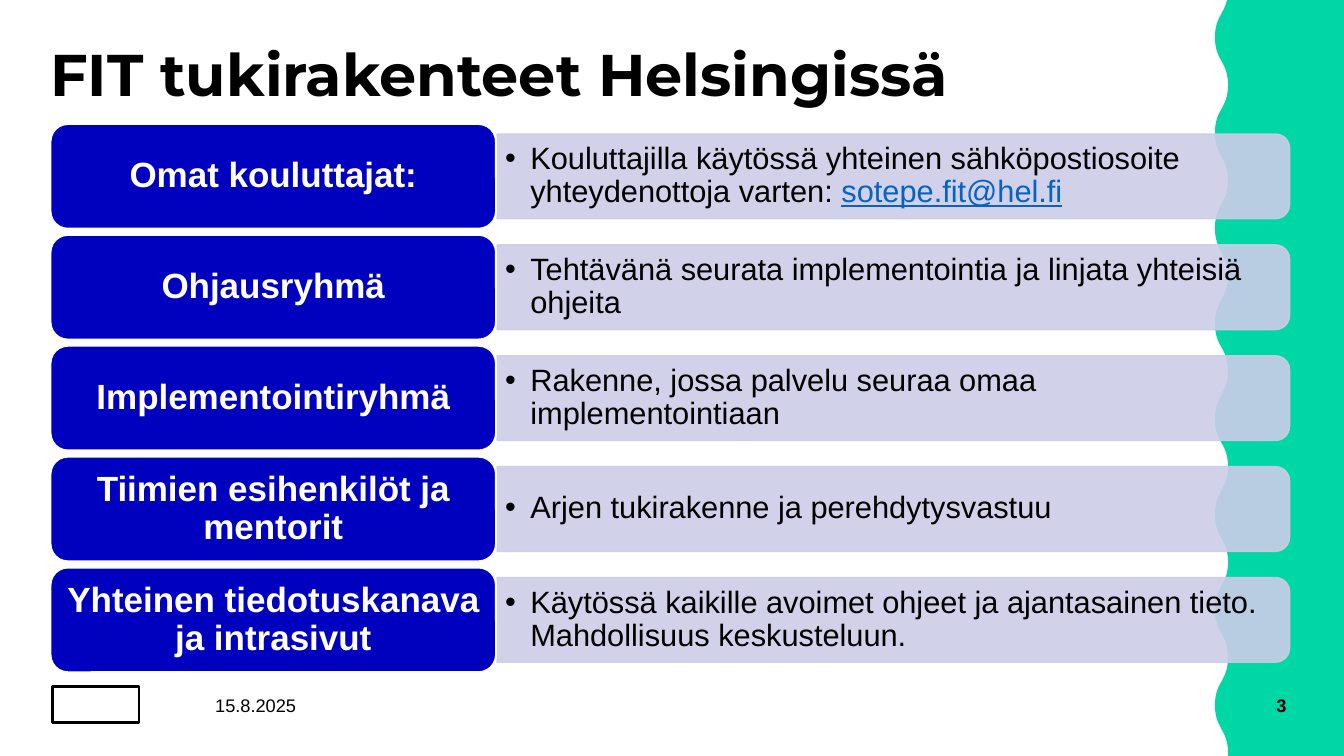
"""Build the slide on FIT support structures in Helsinki."""
import dataclasses

import lxml.etree
import pptx
import pptx.dml.color
import pptx.enum.shapes
import pptx.enum.text
import pptx.oxml.ns
import pptx.util

PX = 9144
SHAPE = pptx.enum.shapes.MSO_SHAPE
ALIGN = pptx.enum.text.PP_ALIGN
ANCHOR = pptx.enum.text.MSO_ANCHOR


@dataclasses.dataclass(frozen=True)
class Theme:
    """Hold the colours, fonts and type sizes of the slide."""
    black: str = "000000"
    white: str = "FFFFFF"
    green: str = "00D7A7"
    blue: str = "0000BF"
    lilac: str = "CCCCE8"
    link: str = "0563C1"
    title_font: str = "Montserrat"
    body_font: str = "Arial"
    title_size: int = 42
    label_size: int = 25
    detail_size: int = 22
    footer_size: int = 13


THEME = Theme()
ROWS = [
    ("Omat kouluttajat:",
     "Kouluttajilla käytössä yhteinen sähköpostiosoite yhteydenottoja varten: ",
     "sotepe.fit@hel.fi"),
    ("Ohjausryhmä",
     "Tehtävänä seurata implementointia ja linjata yhteisiä ohjeita", ""),
    ("Implementointiryhmä",
     "Rakenne, jossa palvelu seuraa omaa implementointiaan", ""),
    ("Tiimien esihenkilöt ja mentorit",
     "Arjen tukirakenne ja perehdytysvastuu", ""),
    ("Yhteinen tiedotuskanava ja intrasivut",
     "Käytössä kaikille avoimet ohjeet ja ajantasainen tieto. "
     "Mahdollisuus keskusteluun.", ""),
]


def px(length):
    """Turn px into EMU."""
    return round(length * PX)


def rgb(value):
    """Turn a hex string into a colour."""
    return pptx.dml.color.RGBColor.from_string(value)


def add_span(para, text, *, size, color, font=THEME.body_font, bold=False, underline=False):
    """Add formatted text to a paragraph."""
    span = para.add_run()
    span.text = text
    span.font.name = font
    span.font.size = pptx.util.Pt(size)
    span.font.bold = bold
    span.font.underline = underline
    span.font.color.rgb = rgb(color)


class Slide:
    """Draw elements on the current page in one theme."""

    def __init__(self, page, theme):
        """Keep the page and the theme."""
        self.page = page
        self.theme = theme

    def frame(self, box, inset=(0, 0), align=ALIGN.LEFT, anchor=ANCHOR.MIDDLE, spacing=0.9):
        """Set up the text frame of a box and return its first paragraph."""
        frame = box.text_frame
        frame.word_wrap = True
        frame.auto_size = pptx.enum.text.MSO_AUTO_SIZE.NONE
        frame.vertical_anchor = anchor
        frame.margin_left = frame.margin_right = px(inset[0])
        frame.margin_top = frame.margin_bottom = px(inset[1])
        para = frame.paragraphs[0]
        para.alignment = align
        para.line_spacing = spacing
        return para

    def paint(self, shape, fill, line=None, width=1):
        """Give a shape its fill and outline without a shadow."""
        shape.shadow.inherit = False
        shape.fill.solid()
        shape.fill.fore_color.rgb = rgb(fill)
        if line:
            shape.line.color.rgb = rgb(line)
            shape.line.width = pptx.util.Pt(width)
        else:
            shape.line.fill.background()

    def shape(self, kind, left, top, width, height, fill, line=None, weight=1):
        """Add a painted preset shape."""
        shape = self.page.shapes.add_shape(kind, px(left), px(top), px(width), px(height))
        self.paint(shape, fill, line, weight)
        return shape

    def textbox(self, left, top, width, height, **layout):
        """Add a text box and return its first paragraph."""
        box = self.page.shapes.add_textbox(px(left), px(top), px(width), px(height))
        return self.frame(box, **layout)

    def title(self, text):
        """Place and fill the title."""
        box = self.page.shapes.title
        box.left, box.top, box.width, box.height = px(50), px(45), px(1229), px(86)
        para = self.frame(box, anchor=ANCHOR.TOP)
        add_span(para, text, size=self.theme.title_size, color=self.theme.black,
                 font=self.theme.title_font, bold=True)

    def wave(self, crest=1205, trough=1218, first=37, step=47.33, right=1333, bottom=750):
        """Draw the green band with its wavy left edge."""
        points = []
        for turn in range(-1, 16):
            start, end = (crest, trough) if turn % 2 == 0 else (trough, crest)
            for part in range(12):
                t = part / 12
                x = start + (end - start) * t * t * (3 - 2 * t)
                y = first + step * (turn + 1.5 * t * (1 - t) + t ** 3)
                if 0 < y < bottom:
                    points.append((px(x), px(y)))
        points += [(px(trough), px(bottom)), (px(right), px(bottom)), (px(right), 0)]
        builder = self.page.shapes.build_freeform(px(trough - 1), 0)
        builder.add_line_segments(points, close=True)
        self.paint(builder.convert_to_shape(), self.theme.green)

    def bar(self, middle):
        """Add a translucent bar, rounded on its right side."""
        length, thickness, center = 786, 84, 886
        bar = self.shape(SHAPE.ROUND_2_SAME_RECTANGLE, center - thickness / 2,
                         middle - length / 2, thickness, length,
                         self.theme.lilac, self.theme.lilac)
        bar.rotation = 90
        for color in bar.element.spPr.iter(pptx.oxml.ns.qn("a:srgbClr")):
            lxml.etree.SubElement(color, pptx.oxml.ns.qn("a:alpha"), val="90000")

    def detail(self, middle, text, address):
        """Add the bulleted text on a bar."""
        para = self.textbox(492, middle - 38, 782, 76, inset=(9, 5))
        properties = para._p.get_or_add_pPr()
        properties.set("marL", str(px(25)))
        properties.set("indent", str(px(-25)))
        lxml.etree.SubElement(properties, pptx.oxml.ns.qn("a:buFont"), typeface=self.theme.body_font)
        lxml.etree.SubElement(properties, pptx.oxml.ns.qn("a:buChar"), char="•")
        add_span(para, text, size=self.theme.detail_size, color=self.theme.black)
        if address:
            add_span(para, address, size=self.theme.detail_size,
                     color=self.theme.link, underline=True)

    def label(self, middle, text):
        """Add the blue label of a row."""
        box = self.shape(SHAPE.ROUNDED_RECTANGLE, 50, middle - 52, 442, 104,
                         self.theme.blue, self.theme.white, 1.5)
        para = self.frame(box, inset=(9, 5), align=ALIGN.CENTER)
        add_span(para, text, size=self.theme.label_size, color=self.theme.white, bold=True)

    def footer(self, left, width, text, align, bold=False):
        """Add a short text on the footer line."""
        para = self.textbox(left, 686, width, 28, align=align, spacing=1.0)
        add_span(para, text, size=self.theme.footer_size, color=self.theme.black, bold=bold)


def main():
    """Build and save the deck."""
    deck = pptx.Presentation()
    deck.slide_width, deck.slide_height = px(1333), px(750)
    slide = Slide(deck.slides.add_slide(deck.slide_layouts[5]), THEME)
    slide.shape(SHAPE.RECTANGLE, 52, 681, 86, 36, THEME.white, THEME.black, 2)
    slide.wave()
    slide.title("FIT tukirakenteet Helsingissä")
    slide.footer(182, 143, "15.8.2025", ALIGN.CENTER)
    slide.footer(1141, 135, "3", ALIGN.RIGHT, bold=True)
    for row, (label, text, address) in enumerate(ROWS):
        middle = 175 + 110 * row
        slide.bar(middle)
        slide.detail(middle, text, address)
        slide.label(middle, label)
    deck.save("out.pptx")


if __name__ == "__main__":
    main()
